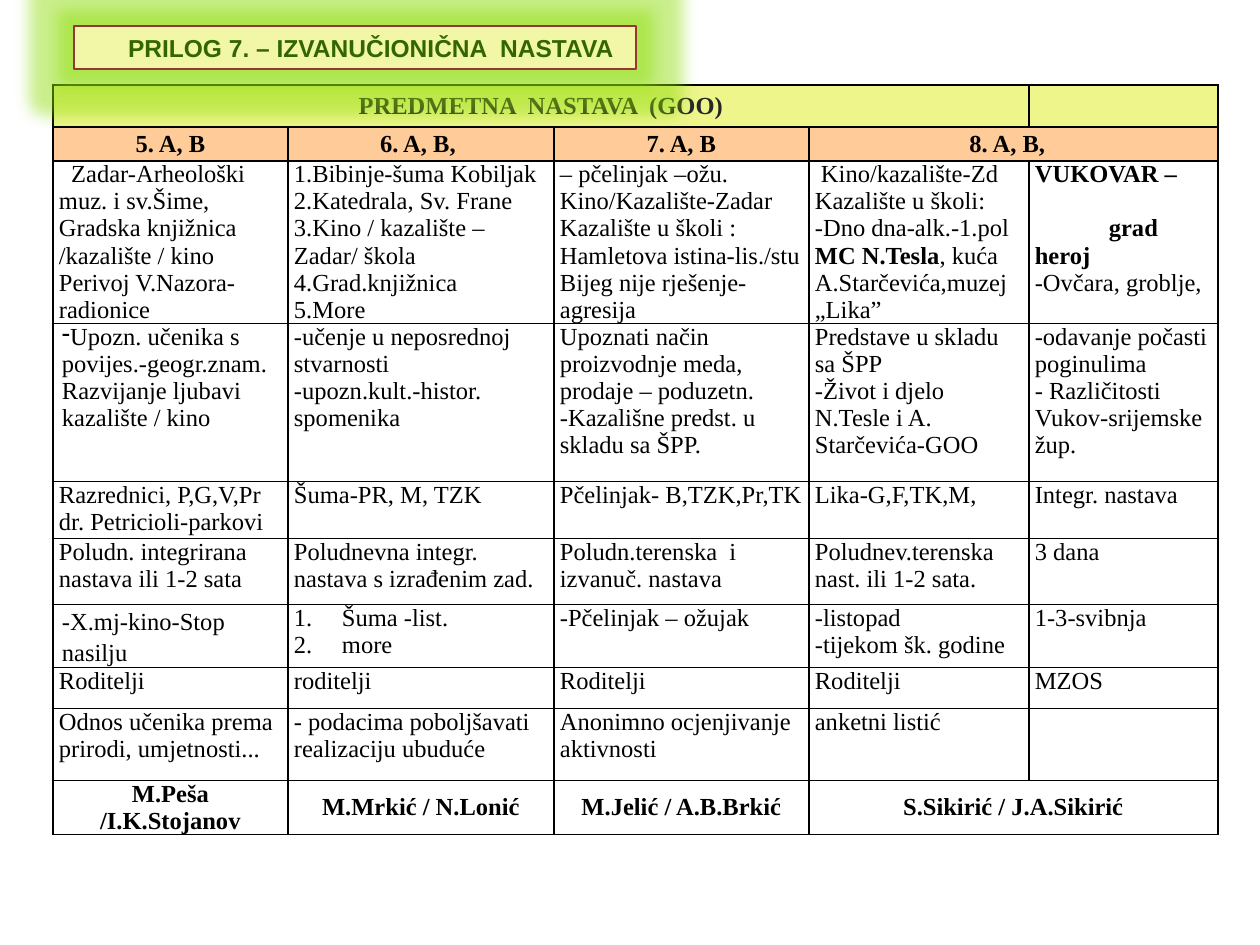
from lxml import etree
from pptx import Presentation
from pptx.dml.color import RGBColor
from pptx.enum.shapes import MSO_SHAPE
from pptx.enum.text import MSO_ANCHOR, PP_ALIGN
from pptx.oxml.ns import qn
from pptx.util import Pt

EMU_PER_PX = 914400 / 126
RECTANGLE = MSO_SHAPE.RECTANGLE
TOP, MIDDLE = MSO_ANCHOR.TOP, MSO_ANCHOR.MIDDLE
LEFT, CENTER = PP_ALIGN.LEFT, PP_ALIGN.CENTER

COLUMN_WIDTHS = [235, 266, 255, 220, 189]
ROW_HEIGHTS = [42, 34, 162, 158, 57, 66, 63, 41, 72, 53]
ROW_FILLS = {0: "EDF58B", 1: "FFCC99"}
CENTERED_ROWS = {0, 1, 9}
MERGES = [(0, 0, 3), (1, 3, 4), (9, 3, 4)]

# A line break starts a paragraph; asterisks enclose bold words.
ROWS = [
    ["*PREDMETNA  NASTAVA  (GOO)*", "", "", "", ""],
    ["*5. A, B*", "*6. A, B, *", "*7. A, B*", "*8. A, B,  *", ""],
    ["  Zadar-Arheološki muz. i sv.Šime, Gradska knjižnica\n/kazalište / kino\n"
     "Perivoj V.Nazora-radionice",
     "1.Bibinje-šuma Kobiljak\n2.Katedrala, Sv. Frane\n"
     "3.Kino / kazalište – Zadar/ škola\n4.Grad.knjižnica\n5.More",
     "– pčelinjak –ožu.\nKino/Kazalište-Zadar\nKazalište u školi :\n"
     "Hamletova istina-lis./stu\nBijeg nije rješenje-agresija",
     " Kino/kazalište-Zd\nKazalište u školi:\n-Dno dna-alk.-1.pol\n"
     "*MC N.Tesla*, kuća A.Starčevića,muzej „Lika”",
     "*VUKOVAR –*\n*grad heroj*\n-Ovčara, groblje,"],
    ["Upozn. učenika s povijes.-geogr.znam. Razvijanje ljubavi  kazalište / kino",
     "-učenje u neposrednoj stvarnosti\n-upozn.kult.-histor. spomenika",
     "Upoznati način proizvodnje meda, prodaje – poduzetn.\n"
     "-Kazališne predst. u skladu sa ŠPP.",
     "Predstave u skladu sa ŠPP\n-Život i djelo N.Tesle i A. Starčevića-GOO",
     "-odavanje počasti poginulima\n- Različitosti Vukov-srijemske žup."],
    ["Razrednici, P,G,V,Pr dr. Petricioli-parkovi", "Šuma-PR, M, TZK",
     "Pčelinjak- B,TZK,Pr,TK", "Lika-G,F,TK,M,", "Integr. nastava"],
    ["Poludn. integrirana nastava ili 1-2 sata",
     "Poludnevna integr. nastava s izrađenim zad.",
     "Poludn.terenska  i izvanuč. nastava",
     "Poludnev.terenska nast. ili 1-2 sata.", "3 dana"],
    ["-X.mj-kino-Stop nasilju", "Šuma -list.\nmore", "-Pčelinjak – ožujak",
     "-listopad\n-tijekom šk. godine", "1-3-svibnja"],
    ["Roditelji", "roditelji", "Roditelji", "Roditelji", "MZOS"],
    ["Odnos učenika prema prirodi, umjetnosti...",
     "- podacima poboljšavati  realizaciju ubuduće",
     "Anonimno ocjenjivanje aktivnosti", "anketni listić", ""],
    ["*M.Peša*\n*/I.K.Stojanov*", "*M.Mrkić / N.Lonić*", "*M.Jelić / A.B.Brkić*",
     "*S.Sikirić / J.A.Sikirić*", ""],
]


def px(length):
    return round(length * EMU_PER_PX)


def color(value):
    return RGBColor.from_string(value)


def add_xml(parent, tag, **attributes):
    values = {name: str(value) for name, value in attributes.items()}
    return etree.SubElement(parent, qn(tag), values)


class SlideBuilder:
    def __init__(self, slide):
        self.slide = slide
        self.style = {"name": "Times New Roman", "size": Pt(14)}

    def add_text(self, para, text, ink="000000", **changes):
        """Add the text, with bold for the words between asterisks."""
        for index, words in enumerate(text.split("*")):
            if not words:
                continue
            span = para.add_run()
            span.text = words
            values = {**self.style, "bold": index % 2 == 1, **changes}
            for name, value in values.items():
                setattr(span.font, name, value)
            span.font.color.rgb = color(ink)

    def border(self, cell):
        properties = cell._tc.get_or_add_tcPr()
        for index, side in enumerate(("a:lnL", "a:lnR", "a:lnT", "a:lnB")):
            line = add_xml(properties, side, w=Pt(1))
            add_xml(add_xml(line, "a:solidFill"), "a:srgbClr", val="000000")
            properties.insert(index, line)

    def cell(self, cell, text, fill, centered, ink):
        margins = {"margin_left": px(6), "margin_right": px(6),
                   "margin_top": 0, "margin_bottom": 0}
        for name, value in margins.items():
            setattr(cell, name, value)
        cell.vertical_anchor = MIDDLE if centered else TOP
        cell.fill.solid()
        cell.fill.fore_color.rgb = color(fill)
        self.border(cell)
        for index, words in enumerate(text.split("\n")):
            frame = cell.text_frame
            para = frame.add_paragraph() if index else frame.paragraphs[0]
            para.alignment = CENTER if centered else LEFT
            self.add_text(para, words, ink)

    def table(self, left, top):
        frame = self.slide.shapes.add_table(
            len(ROWS), len(COLUMN_WIDTHS), px(left), px(top),
            px(sum(COLUMN_WIDTHS)), px(sum(ROW_HEIGHTS)))
        table = frame.table
        table.first_row = table.horz_banding = False
        for column, width in zip(table.columns, COLUMN_WIDTHS):
            column.width = px(width)
        for number, (row, height) in enumerate(zip(table.rows, ROW_HEIGHTS)):
            row.height = px(height)
            for cell, text in zip(row.cells, ROWS[number]):
                self.cell(cell, text, ROW_FILLS.get(number, "FFFFFF"),
                          number in CENTERED_ROWS, "000000" if number else "262626")
        for row, first, last in MERGES:
            table.cell(row, first).merge(table.cell(row, last))
        return table

    def bullet(self, para, tag, indent=0, **attributes):
        properties = para._p.get_or_add_pPr()
        properties.set("marL", str(px(indent)))
        properties.set("indent", str(-px(indent)))
        add_xml(properties, tag, **attributes)

    def title(self, text, left, top, width, height):
        box = self.slide.shapes.add_shape(
            RECTANGLE, px(left), px(top), px(width), px(height))
        box.fill.solid()
        box.fill.fore_color.rgb = color("F1F7A7")
        box.line.color.rgb = color("953735")
        box.line.width = Pt(0.75)
        box.shadow.inherit = False
        effects = box._element.spPr.find(qn("a:effectLst"))
        glow = add_xml(effects, "a:glow", rad=Pt(18))
        add_xml(add_xml(glow, "a:srgbClr", val="8ADC00"), "a:alpha", val=45000)
        frame = box.text_frame
        values = {"word_wrap": True, "vertical_anchor": MIDDLE, "margin_left": px(54),
                  "margin_right": 0, "margin_top": 0, "margin_bottom": 0}
        for name, value in values.items():
            setattr(frame, name, value)
        para = frame.paragraphs[0]
        para.alignment = LEFT
        self.add_text(para, text, "336600", name="Arial", bold=True)


def main():
    deck = Presentation()
    deck.slide_width, deck.slide_height = px(1260), px(945)
    page = SlideBuilder(deck.slides.add_slide(deck.slide_layouts[6]))
    table = page.table(53, 85)

    for row in (3, 6):
        table.cell(row, 0).margin_left = table.cell(row, 0).margin_right = px(9)
    page.bullet(table.cell(3, 0).text_frame.paragraphs[0], "a:buChar", char="-")
    table.cell(6, 0).text_frame.paragraphs[0].line_spacing = 1.15
    for para in table.cell(6, 1).text_frame.paragraphs:
        page.bullet(para, "a:buAutoNum", 48, type="arabicPeriod")
    hero_town = table.cell(2, 4).text_frame.paragraphs[1]
    hero_town.space_before = Pt(15.5)
    hero_town._p.get_or_add_pPr().set("indent", str(px(74)))

    page.title("PRILOG 7. – IZVANUČIONIČNA  NASTAVA", 74, 26, 562, 43)
    deck.save("out.pptx")


if __name__ == "__main__":
    main()
